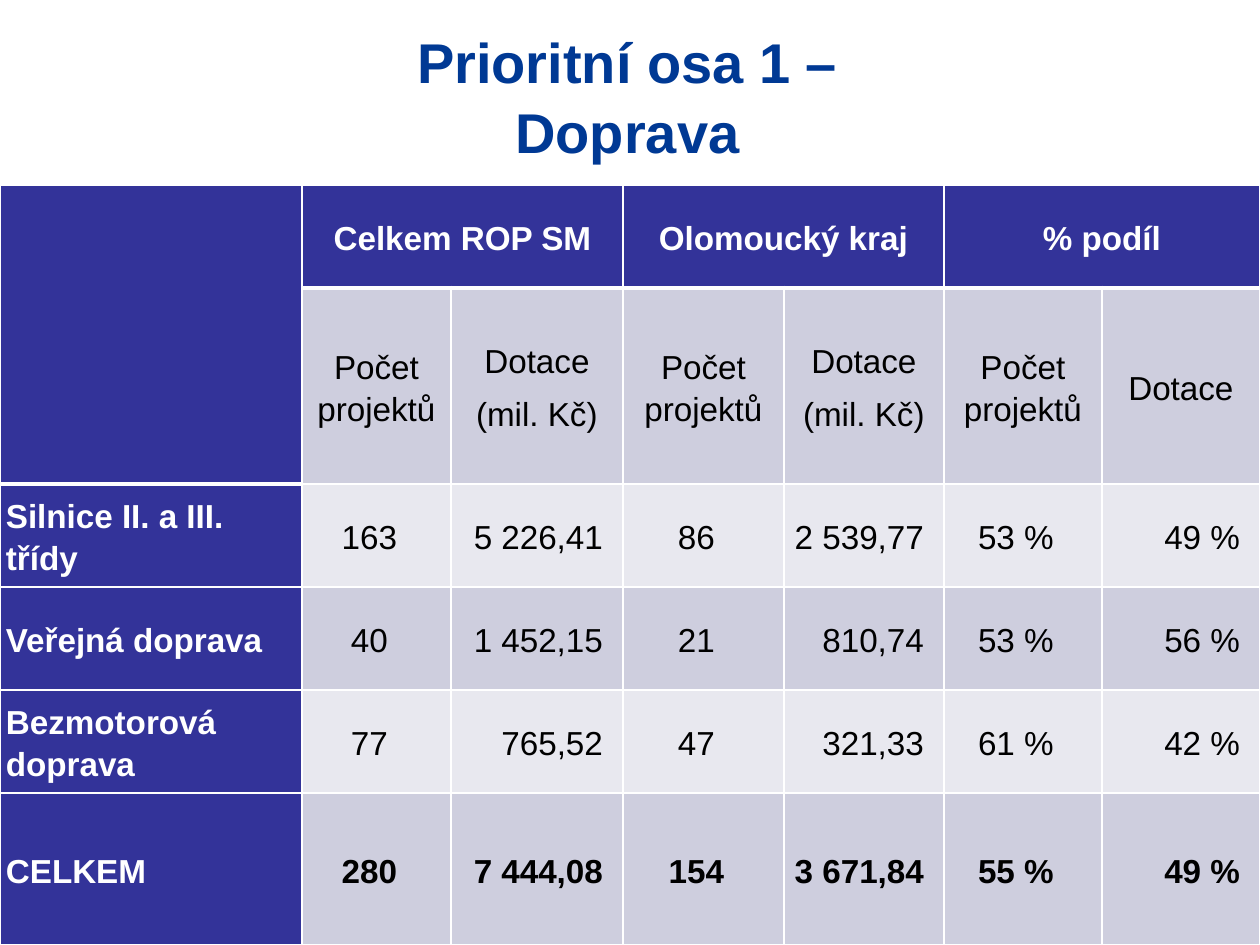
import lxml.etree
import pptx
import pptx.dml.color
import pptx.enum.text
import pptx.oxml.ns
import pptx.util

EMU_PER_PX = 914400 // 126
ALIGN = pptx.enum.text.PP_ALIGN
MIDDLE = pptx.enum.text.MSO_ANCHOR.MIDDLE

NAVY, TITLE_BLUE = "333399", "003994"
LIGHT, DARK = "E8E8EF", "CECEDE"
WHITE, BLACK = "FFFFFF", "000000"

COLUMN_WIDTHS = [302, 149, 172, 161, 160, 158, 158]
ROW_HEIGHTS = [103, 196, 103, 103, 103, 152]
ROWS = [
    ["", "Celkem ROP SM", "", "Olomoucký kraj", "", "% podíl", ""],
    ["", "Počet projektů", "Dotace\n(mil. Kč)", "Počet projektů",
     "Dotace\n(mil. Kč)", "Počet projektů", "Dotace"],
    ["Silnice II. a III. třídy", "163", "5 226,41", "86", "2 539,77", "53 %", "49 %"],
    ["Veřejná doprava", "40", "1 452,15", "21", "810,74", "53 %", "56 %"],
    ["Bezmotorová doprava", "77", "765,52", "47", "321,33", "61 %", "42 %"],
    ["CELKEM", "280", "7 444,08", "154", "3 671,84", "55 %", "49 %"],
]
MERGES = [(0, 0, 1, 0), (0, 1, 0, 2), (0, 3, 0, 4), (0, 5, 0, 6)]


def px(length):
    return pptx.util.Emu(length * EMU_PER_PX)


def color(value):
    return pptx.dml.color.RGBColor.from_string(value)


def has_heavy_bottom(row, column):
    return row == 0 or (row, column) == (1, 0)


class SlideBuilder:
    font_name = "Arial"

    def __init__(self, slide):
        self.slide = slide

    def format_text(self, text_frame, size, font_color, bold, alignment, spacing, after=0):
        for paragraph in text_frame.paragraphs:
            paragraph.alignment = alignment
            paragraph.line_spacing = spacing
            paragraph.space_after = pptx.util.Pt(after)
            for run in paragraph.runs:
                run.font.name = self.font_name
                run.font.size = pptx.util.Pt(size)
                run.font.bold = bold
                run.font.color.rgb = color(font_color)

    def add_title(self, text, left, top, width, height):
        shape = self.slide.shapes.add_textbox(px(left), px(top), px(width), px(height))
        text_frame = shape.text_frame
        text_frame.word_wrap = True
        text_frame.vertical_anchor = MIDDLE
        text_frame.text = text
        self.format_text(text_frame, 32, TITLE_BLUE, True, ALIGN.CENTER, 1.04)

    def add_borders(self, cell, top, bottom):
        properties = cell._tc.get_or_add_tcPr()
        for side, points in (("L", 1), ("R", 1), ("T", top), ("B", bottom)):
            line = lxml.etree.SubElement(
                properties, pptx.oxml.ns.qn(f"a:ln{side}"), w=str(pptx.util.Pt(points)))
            fill = lxml.etree.SubElement(line, pptx.oxml.ns.qn("a:solidFill"))
            lxml.etree.SubElement(fill, pptx.oxml.ns.qn("a:srgbClr"), val=WHITE)

    def fill_cell(self, cell, text, row, column):
        is_heading = row == 0 or column == 0
        is_number = row > 1 and column > 0
        self.add_borders(
            cell,
            3 if row and has_heavy_bottom(row - 1, column) else 1,
            3 if has_heavy_bottom(row, column) else 1)
        cell.fill.solid()
        cell.fill.fore_color.rgb = color(NAVY if is_heading else DARK if row % 2 else LIGHT)
        if row == len(ROWS) - 1 and not is_heading:
            cell.fill.fore_color.rgb = color(DARK)
        cell.vertical_anchor = MIDDLE
        cell.margin_left = px(6)
        cell.margin_right = px(20 if is_number else 6)
        cell.margin_top = cell.margin_bottom = 0
        if not text:
            return
        cell.text_frame.text = text
        if row > 1 and column == 0:
            alignment = ALIGN.LEFT
        elif is_number and column % 2 == 0:
            alignment = ALIGN.RIGHT
        else:
            alignment = ALIGN.CENTER
        self.format_text(
            cell.text_frame, 19, WHITE if is_heading else BLACK,
            is_heading or row == len(ROWS) - 1, alignment, 1.15, 6)

    def add_table(self, left, top):
        table = self.slide.shapes.add_table(
            len(ROWS), len(COLUMN_WIDTHS), px(left), px(top),
            px(sum(COLUMN_WIDTHS)), px(sum(ROW_HEIGHTS))).table
        table.first_row = False
        table.horz_banding = False
        for column, width in zip(table.columns, COLUMN_WIDTHS):
            column.width = px(width)
        for row, height in zip(table.rows, ROW_HEIGHTS):
            row.height = px(height)
        for first_row, first_column, last_row, last_column in MERGES:
            table.cell(first_row, first_column).merge(table.cell(last_row, last_column))
        for row, texts in enumerate(ROWS):
            for column, text in enumerate(texts):
                self.fill_cell(table.cell(row, column), text, row, column)


def main():
    presentation = pptx.Presentation()
    presentation.slide_width = px(1260)
    presentation.slide_height = px(945)
    builder = SlideBuilder(presentation.slides.add_slide(presentation.slide_layouts[6]))
    builder.add_title("Prioritní osa 1 – Doprava", 305, 16, 645, 158)
    builder.add_table(0, 185)
    presentation.save("out.pptx")


if __name__ == "__main__":
    main()
